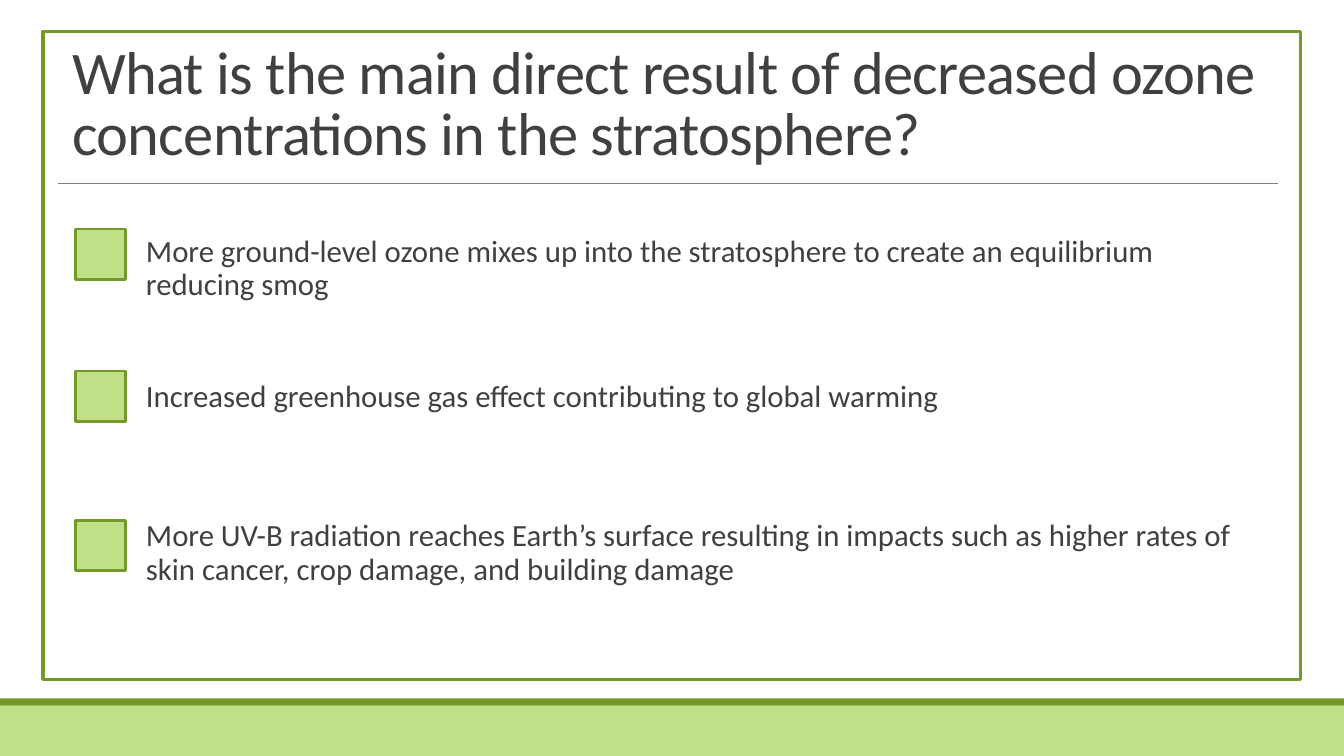
from pptx import Presentation
from pptx.dml.color import RGBColor
from pptx.enum.shapes import MSO_CONNECTOR, MSO_SHAPE
from pptx.enum.text import MSO_ANCHOR, PP_ALIGN
from pptx.oxml.ns import qn
from pptx.util import Cm, Pt
from lxml import etree

RECT = MSO_SHAPE.RECTANGLE
STRAIGHT = MSO_CONNECTOR.STRAIGHT
TOP, BOTTOM = MSO_ANCHOR.TOP, MSO_ANCHOR.BOTTOM
LEFT = PP_ALIGN.LEFT

LIME = RGBColor(0xC1, 0xDF, 0x87)
GREEN = RGBColor(0x73, 0x9A, 0x28)
GREY = RGBColor(0x7F, 0x7F, 0x7F)
INK = RGBColor(0x40, 0x40, 0x40)
FONT = "Calibri"

WIDTH, HEIGHT = 33.87, 19.05
BAND_TOP = 17.78
EDGE = 0.18
BOX = 1.27

TITLE = ("What is the main direct result of decreased ozone "
         "concentrations in the stratosphere?")
# Top of the check box, top and height of the text, wording
ANSWERS = [
    (5.77, 5.82, 1.7, "More ground-level ozone mixes up into the stratosphere "
     "to create an equilibrium reducing smog"),
    (9.35, 9.47, 1.27, "Increased greenhouse gas effect contributing to "
     "global warming"),
    (13.11, 12.98, 2.24, "More UV-B radiation reaches Earth’s surface resulting "
     "in impacts such as higher rates of skin cancer, crop damage, "
     "and building damage"),
]


def add_rect(slide, left, top, width, height, fill=None, weight=None):
    """Draw a rectangle; without a fill or a line weight that part is left off."""
    rect = slide.shapes.add_shape(RECT, Cm(left), Cm(top), Cm(width), Cm(height))
    rect.shadow.inherit = False
    if fill is None:
        rect.fill.background()
    else:
        rect.fill.solid()
        rect.fill.fore_color.rgb = fill
    if weight is None:
        rect.line.fill.background()
    else:
        rect.line.color.rgb = GREEN
        rect.line.width = Pt(weight)


def add_text(slide, left, top, width, height, words, size, spacing,
             side=0, anchor=TOP, track=None):
    """Add a text box; side is its side inset, track the letter spacing in 1/100 pt."""
    box = slide.shapes.add_textbox(Cm(left), Cm(top), Cm(width), Cm(height))
    frame = box.text_frame
    frame.word_wrap = True
    frame.vertical_anchor = anchor
    frame.margin_left = frame.margin_right = Cm(side)
    frame.margin_top = frame.margin_bottom = Cm(0.13)
    para = frame.paragraphs[0]
    para.alignment = LEFT
    para.line_spacing = spacing
    run = para.add_run()
    run.text = words
    run.font.name = FONT
    run.font.size = Pt(size)
    run.font.color.rgb = INK
    if track is not None:
        run._r.get_or_add_rPr().set("spc", str(track))


def add_rule(slide, left, right, top):
    rule = slide.shapes.add_connector(STRAIGHT, Cm(left), Cm(top), Cm(right), Cm(top))
    rule.line.color.rgb = GREY
    rule.line.width = Pt(0.75)
    etree.SubElement(rule._element.spPr, qn("a:effectLst"))


def main():
    deck = Presentation()
    deck.slide_width, deck.slide_height = Cm(WIDTH), Cm(HEIGHT)
    slide = deck.slides.add_slide(deck.slide_layouts[6])

    add_rect(slide, 0, BAND_TOP, WIDTH, HEIGHT - BAND_TOP, LIME)
    add_rect(slide, 0, BAND_TOP - EDGE, WIDTH, EDGE, GREEN)
    add_rect(slide, 1.08, 0.79, 31.7, 16.33, weight=2.5)

    add_text(slide, 1.57, 1.09, 31.04, 3.28, TITLE, 43.2, 0.85,
             side=0.25, anchor=BOTTOM, track=-50)
    add_rule(slide, 1.45, 32.21, 4.62)

    for box_top, text_top, height, words in ANSWERS:
        add_rect(slide, 1.9, box_top, BOX, BOX, LIME, 2)
        add_text(slide, 3.68, text_top, 27.48, height, words, 22, 0.9)

    deck.save("out.pptx")


if __name__ == "__main__":
    main()
